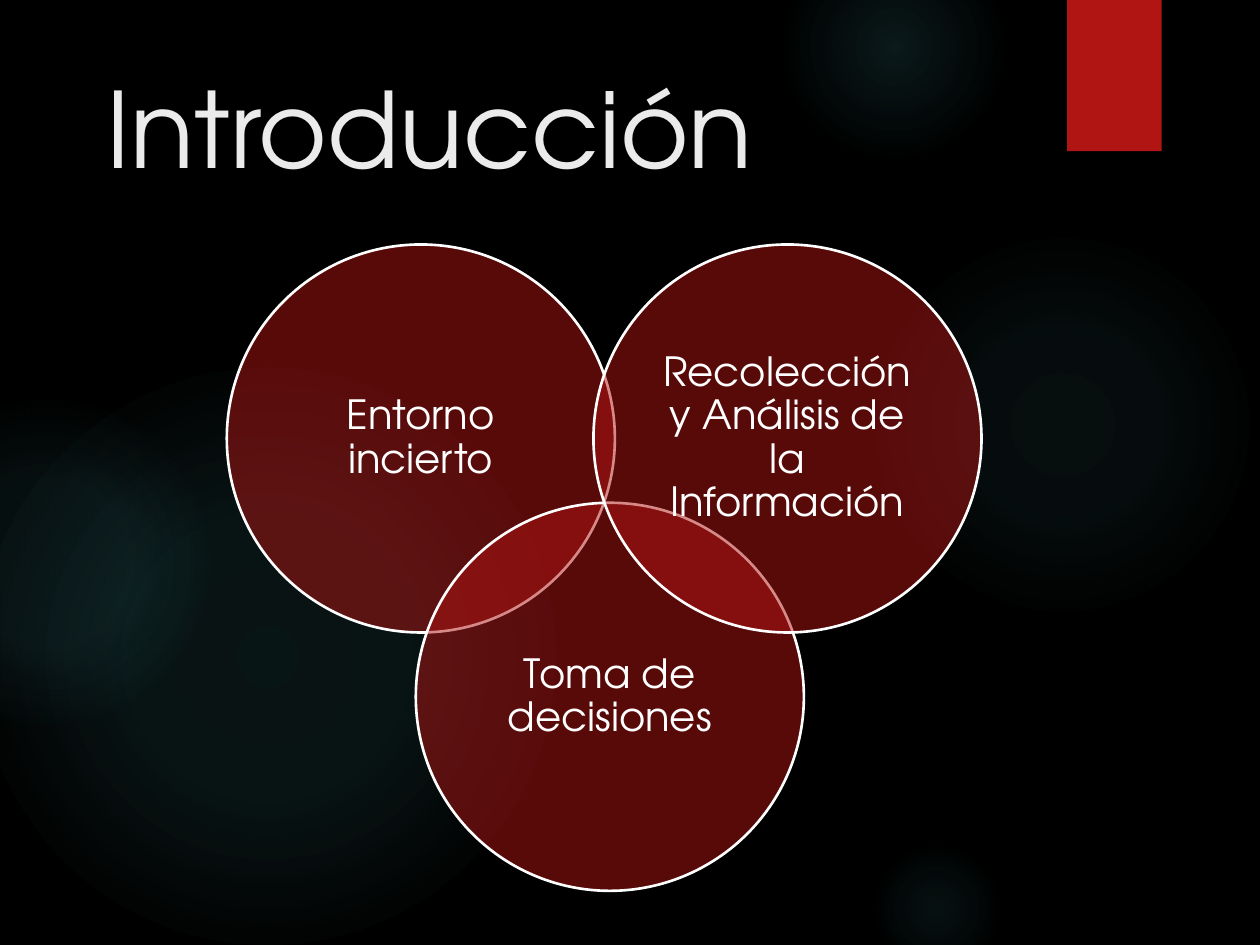
import pptx
import pptx.util
import pptx.dml.color
import pptx.enum.shapes
import pptx.enum.text
import pptx.oxml
import pptx.oxml.ns
import lxml.etree

Inches = pptx.util.Inches
Pt = pptx.util.Pt
qn = pptx.oxml.ns.qn
MSO_SHAPE = pptx.enum.shapes.MSO_SHAPE
FONT = "TeX Gyre Adventor"
RED = "B01513"


def rgb(value):
    return pptx.dml.color.RGBColor.from_string(value)


def add_run(p, text, size, color):
    r = p.add_run()
    r.text = text
    r.font.name = FONT
    r.font.size = Pt(size)
    r.font.color.rgb = rgb(color)


prs = pptx.Presentation()
prs.slide_width = Inches(10)
prs.slide_height = Inches(7.5)
s = prs.slides.add_slide(prs.slide_layouts[6])
s.background.fill.solid()
s.background.fill.fore_color.rgb = rgb("000000")

glows = [
    (6.89, 1.83, 3.08, [(0, 7), (36, 6), (69, 0)]),
    (6.22, -0.5, 1.75, [(0, 14), (36, 7), (73, 0)]),
    (6.89, 6.67, 1.08, [(0, 9), (36, 5), (66, 0)]),
    (-0.17, 2.92, 4.58, [(0, 11), (36, 10), (75, 0)]),
    (-0.92, 3.17, 2.58, [(0, 8), (36, 8), (72, 0)]),
]
for x, y, d, stops in glows:
    sp = s.shapes.add_shape(MSO_SHAPE.OVAL, Inches(x), Inches(y), Inches(d), Inches(d))
    sp.shadow.inherit = False
    sp.line.fill.background()
    sp.fill.background()
    stop_xml = "".join(
        f'<a:gs pos="{pos * 1000}"><a:srgbClr val="50B9C1">'
        f'<a:alpha val="{alpha * 1000}"/></a:srgbClr></a:gs>'
        for pos, alpha in stops
    )
    grad = pptx.oxml.parse_xml(
        f'<a:gradFill {pptx.oxml.ns.nsdecls("a")} rotWithShape="1"><a:gsLst>{stop_xml}</a:gsLst>'
        '<a:path path="circle"><a:fillToRect l="50000" t="50000" r="50000" b="50000"/></a:path>'
        '</a:gradFill>'
    )
    spPr = sp._element.spPr
    spPr.replace(spPr.find(qn("a:noFill")), grad)

sp = s.shapes.add_shape(MSO_SHAPE.RECTANGLE, Inches(8.47), 0, Inches(0.75), Inches(1.2))
sp.shadow.inherit = False
sp.line.fill.background()
sp.fill.solid()
sp.fill.fore_color.rgb = rgb(RED)

tf = s.shapes.add_textbox(Inches(0.75), Inches(0.76), Inches(8.5), Inches(0.79)).text_frame
tf.word_wrap = True
tf.vertical_anchor = pptx.enum.text.MSO_ANCHOR.BOTTOM
add_run(tf.paragraphs[0], "Introducción", 60, "EBEBEB")

circles = [
    (1.8, 1.94, "Entorno incierto"),
    (3.3, 3.99, "Toma de decisiones"),
    (4.71, 1.94, "Recolección y Análisis de la Información"),
]
for x, y, text in circles:
    sp = s.shapes.add_shape(MSO_SHAPE.OVAL, Inches(x), Inches(y), Inches(3.08), Inches(3.08))
    sp.shadow.inherit = False
    sp.fill.solid()
    sp.fill.fore_color.rgb = rgb(RED)
    color = sp._element.spPr.find(qn("a:solidFill")).find(qn("a:srgbClr"))
    lxml.etree.SubElement(color, qn("a:alpha")).set("val", "50000")
    sp.line.color.rgb = rgb("FFFFFF")
    sp.line.width = Pt(1.5)
    tf = sp.text_frame
    tf.word_wrap = True
    tf.vertical_anchor = pptx.enum.text.MSO_ANCHOR.MIDDLE
    tf.margin_left = tf.margin_right = tf.margin_top = tf.margin_bottom = Inches(0.1)
    p = tf.paragraphs[0]
    p.alignment = pptx.enum.text.PP_ALIGN.CENTER
    p.line_spacing = 0.9
    p.space_after = Pt(8)
    add_run(p, text, 23, "FFFFFF")

prs.save("out.pptx")
